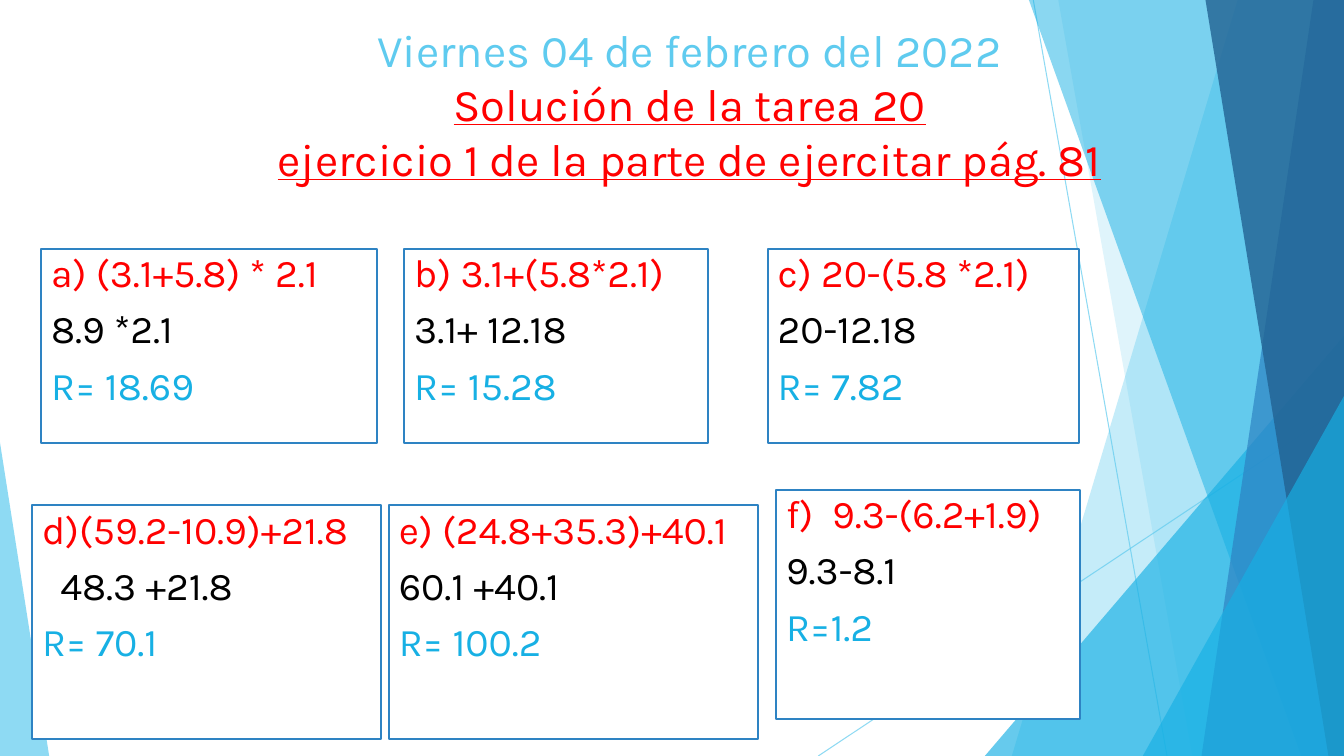
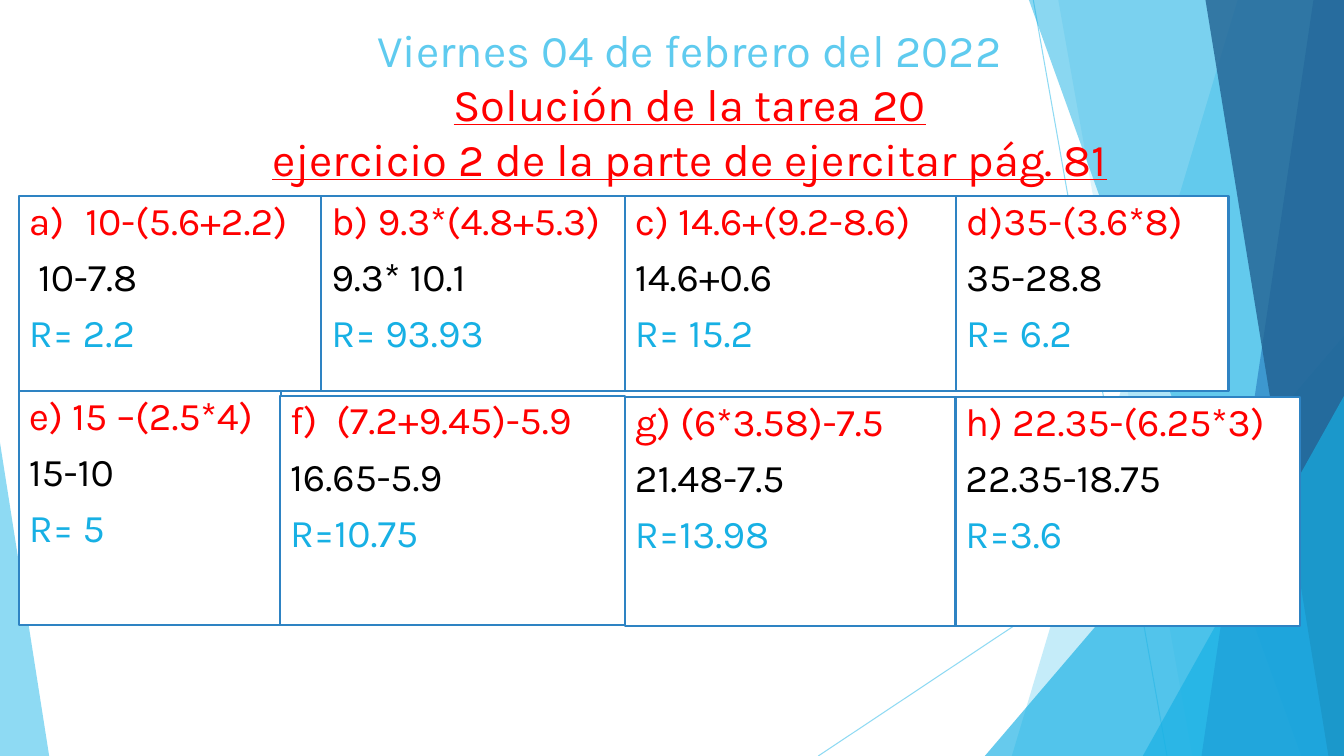
import pptx
import pptx.dml.color
import pptx.enum.shapes
import pptx.enum.text
import pptx.oxml
import pptx.oxml.ns
import pptx.util

Cm = pptx.util.Cm
Pt = pptx.util.Pt
RGBColor = pptx.dml.color.RGBColor
qn = pptx.oxml.ns.qn
SHAPES = pptx.enum.shapes.MSO_SHAPE
ALIGN = pptx.enum.text.PP_ALIGN

FONT = "Karla"
COLORS = {
    "sky": "5FCBEF",
    "cyan": "17B0E4",
    "blue": "2E83C3",
    "navy": "226292",
    "red": "FF0000",
    "black": "000000",
    "white": "FFFFFF",
}
WIDTH, HEIGHT = 33.87, 19.05

# Lines: start x, start y, end x, end y
BACKDROP_LINES = [(26.04, 0, 29.41, HEIGHT), (WIDTH, 10.24, 20.62, HEIGHT)]

# Bands: top x and bottom x of the slanted edge, each reaching the right side.
# Triangles: left, top, width, apex position, each standing on the bottom edge.
BACKDROP_SHAPES = [
    ("band", "sky", 36, (31.19, 25.5)),
    ("band", "sky", 20, (26.67, 30.05)),
    ("triangle", "cyan", 66, (24.82, 8.46, 9.05, 1)),
    ("band", "cyan", 50, (25.93, 32.79)),
    ("band", "blue", 70, (33.1, 30.28)),
    ("band", "navy", 80, (30.38, 33.48)),
    ("triangle", "cyan", 66, (28.8, 9.98, 5.07, 1)),
    ("triangle", "sky", 70, (0, 11.15, 1.24, 0)),
]

# Exercises: left, top, width, height, expression, step, answer, layout options
SLIDES = [
    ("ejercicio 1 de la parte de ejercitar pág. 81", [
        (1.04, 6.27, 8.46, 4.9, "a) (3.1+5.8) * 2.1", "8.9 *2.1", "R= 18.69", {}),
        (10.19, 6.27, 7.65, 4.9, "b) 3.1+(5.8*2.1)", "3.1+ 12.18", "R= 15.28", {}),
        (19.35, 6.27, 7.85, 4.9, "c) 20-(5.8 *2.1)", "20-12.18", "R= 7.82", {}),
        (0.81, 12.73, 8.79, 5.89, "d)(59.2-10.9)+21.8", "48.3 +21.8", "R= 70.1",
         {"step_indent": 0.46}),
        (9.8, 12.73, 9.3, 5.89, "e) (24.8+35.3)+40.1", "60.1 +40.1", "R= 100.2", {}),
        (19.56, 12.34, 7.65, 5.77, "9.3-(6.2+1.9)", "9.3-8.1", "R=1.2",
         {"number": 6, "indent": 1.16}),
    ]),
    ("ejercicio 2 de la parte de ejercitar pág. 81", [
        (0.48, 4.95, 7.65, 4.9, "10-(5.6+2.2)", "10-7.8", "R= 2.2",
         {"number": 1, "indent": 1.42, "step_indent": 0.23}),
        (8.1, 4.95, 7.65, 4.9, "b) 9.3*(4.8+5.3)", "9.3* 10.1", "R= 93.93", {}),
        (15.75, 4.95, 8.36, 4.9, "c) 14.6+(9.2-8.6)", "14.6+0.6", "R= 15.2", {}),
        (24.1, 4.95, 6.86, 4.9, "d)35-(3.6*8)", "35-28.8", "R= 6.2", {}),
        (0.48, 9.86, 6.6, 5.89, "e) 15 –(2.5*4)", "15-10", "R= 5", {}),
        (7.06, 9.98, 8.69, 5.77, "(7.2+9.45)-5.9", "16.65-5.9", "R=10.75",
         {"number": 6, "indent": 1.16}),
        (15.75, 10.01, 8.36, 5.77, "g) (6*3.58)-7.5", "21.48-7.5", "R=13.98", {}),
        (24.08, 10.01, 8.69, 5.77, "h) 22.35-(6.25*3)", "22.35-18.75", "R=3.6", {}),
    ]),
]


def write_line(frame, text, color, size=28, underline=None, align=ALIGN.LEFT,
               spacing=0.9, before=10, indent=0, number=None):
    """Add one paragraph; number gives it a hanging letter (1 is a)."""
    first = frame.paragraphs[0]
    paragraph = frame.add_paragraph() if first.runs else first
    paragraph.alignment = align
    paragraph.line_spacing = spacing
    paragraph.space_before = Pt(before)
    run = paragraph.add_run()
    run.text = text
    run.font.name = FONT
    run.font.size = Pt(size)
    run.font.underline = underline
    run.font.color.rgb = RGBColor.from_string(COLORS[color])
    if indent:
        properties = paragraph._p.get_or_add_pPr()
        properties.set("marL", str(Cm(indent)))
        properties.set("indent", str(-Cm(indent) if number else 0))
        if number:
            bullet_font = pptx.oxml.parse_xml(
                f'<a:buFont {pptx.oxml.ns.nsdecls("a")} typeface="{FONT}"/>')
            numbering = pptx.oxml.parse_xml(
                f'<a:buAutoNum {pptx.oxml.ns.nsdecls("a")} '
                f'type="alphaLcParenR" startAt="{number}"/>')
            properties.extend([bullet_font, numbering])


def set_opacity(shape, percent):
    for color in shape.element.spPr.iter(qn("a:srgbClr")):
        alpha = color.makeelement(qn("a:alpha"), {"val": str(percent * 1000)})
        color.append(alpha)


presentation = pptx.Presentation()
presentation.slide_width = Cm(WIDTH)
presentation.slide_height = Cm(HEIGHT)

for heading, exercises in SLIDES:
    slide = presentation.slides.add_slide(presentation.slide_layouts[6])

    for ends in BACKDROP_LINES:
        line = slide.shapes.add_connector(
            pptx.enum.shapes.MSO_CONNECTOR.STRAIGHT, *[Cm(end) for end in ends])
        line.line.width = Pt(0.75)
        line.line.color.rgb = RGBColor.from_string(COLORS["sky"])
        set_opacity(line, 70)
        properties = line.element.spPr
        properties.append(properties.makeelement(qn("a:effectLst"), {}))

    for kind, color, opacity, geometry in BACKDROP_SHAPES:
        if kind == "band":
            top_x, bottom_x = geometry
            builder = slide.shapes.build_freeform(Cm(top_x), 0)
            corners = [(WIDTH, 0), (WIDTH, HEIGHT), (bottom_x, HEIGHT)]
            builder.add_line_segments([(Cm(x), Cm(y)) for x, y in corners])
            shape = builder.convert_to_shape()
        else:
            left, top, width, apex = geometry
            shape = slide.shapes.add_shape(
                SHAPES.ISOSCELES_TRIANGLE, Cm(left), Cm(top), Cm(width), Cm(HEIGHT - top))
            shape.adjustments[0] = apex
        shape.shadow.inherit = False
        shape.fill.solid()
        shape.fill.fore_color.rgb = RGBColor.from_string(COLORS[color])
        shape.line.fill.background()
        set_opacity(shape, opacity)

    for left, top, width, height, expression, step, answer, options in exercises:
        box = slide.shapes.add_shape(
            SHAPES.RECTANGLE, Cm(left), Cm(top), Cm(width), Cm(height))
        box.shadow.inherit = False
        box.fill.solid()
        box.fill.fore_color.rgb = RGBColor.from_string(COLORS["white"])
        box.line.color.rgb = RGBColor.from_string(COLORS["blue"])
        box.line.width = Pt(1.5)
        frame = box.text_frame
        frame.word_wrap = True
        frame.vertical_anchor = pptx.enum.text.MSO_ANCHOR.TOP
        write_line(frame, expression, "red", indent=options.get("indent", 0),
                   number=options.get("number"))
        write_line(frame, step, "black", indent=options.get("step_indent", 0))
        write_line(frame, answer, "cyan")

    title = slide.shapes.add_textbox(Cm(5.44), Cm(0.43), Cm(23.88), Cm(3.66))
    title.text_frame.word_wrap = True
    title_lines = [
        ("Viernes 04 de febrero del 2022", "sky", None),
        ("Solución de la tarea 20", "red", True),
        (heading, "red", True),
    ]
    for text, color, underline in title_lines:
        write_line(title.text_frame, text, color, size=32.4, underline=underline,
                   align=ALIGN.CENTER, spacing=1.0, before=0)

presentation.save("out.pptx")
